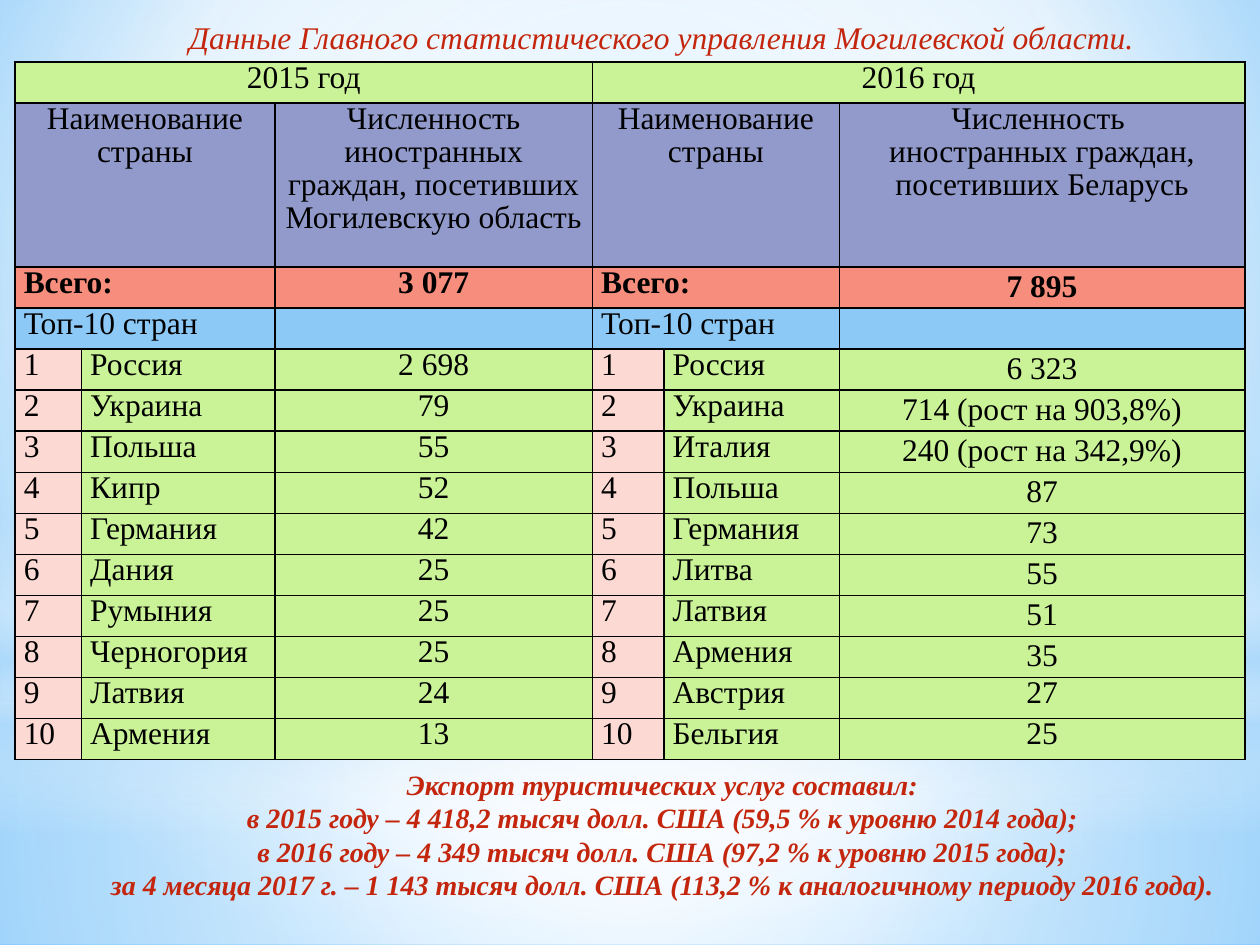
from lxml.etree import SubElement
from pptx import Presentation
from pptx.dml.color import RGBColor
from pptx.enum.shapes import MSO_SHAPE
from pptx.enum.text import MSO_ANCHOR, MSO_AUTO_SIZE, PP_ALIGN
from pptx.oxml.ns import qn
from pptx.util import Pt

FONT = "Times New Roman"
BLACK = RGBColor(0x00, 0x00, 0x00)
RED = RGBColor(0xC3, 0x26, 0x0C)
GREEN = RGBColor(0xCA, 0xF2, 0x97)
VIOLET = RGBColor(0x91, 0x9A, 0xCA)
CORAL = RGBColor(0xF7, 0x8D, 0x7C)
BLUE = RGBColor(0x8C, 0xC9, 0xF7)
PINK = RGBColor(0xFC, 0xD9, 0xD3)
WHITE = RGBColor(0xFF, 0xFF, 0xFF)
SKY = RGBColor(0xB4, 0xDC, 0xFA)
PALE = RGBColor(0x9E, 0xD5, 0xFF)
DEEP = RGBColor(0x5B, 0xB9, 0xFF)


def blend(owner, fill, stops, focus):
    """Fill with (place, colour, opacity) stops, radial at focus, or downward if focus is None."""
    fill.gradient()
    grad = owner.element.find(".//" + qn("a:gradFill"))
    for part in list(grad):
        grad.remove(part)
    group = SubElement(grad, qn("a:gsLst"))
    for place, color, alpha in stops:
        stop = SubElement(group, qn("a:gs"), pos=str(place * 1000))
        tint = SubElement(stop, qn("a:srgbClr"), val=str(color))
        SubElement(tint, qn("a:alpha"), val=str(alpha * 1000))
    if focus is None:
        SubElement(grad, qn("a:lin"), ang="5400000", scaled="0")
    else:
        route = SubElement(grad, qn("a:path"), path="circle")
        sides = {side: str(part * 1000) for side, part in zip("ltrb", focus)}
        SubElement(route, qn("a:fillToRect"), sides)


def style(par, size, color, align):
    par.alignment = align
    par.font.name = FONT
    par.font.size = Pt(size)
    par.font.color.rgb = color


deck = Presentation()
deck.slide_width, deck.slide_height = Pt(720), Pt(540)
slide = deck.slides.add_slide(deck.slide_layouts[5])

# Backdrop
blend(slide, slide.background.fill,
      [(0, PALE, 100), (60, WHITE, 100), (100, DEEP, 100)], (20, 10, 20, 60))
MID = (50, 50, 50, 50)
RECT, OVAL = MSO_SHAPE.RECTANGLE, MSO_SHAPE.OVAL
glows = [
    (RECT, 402, 138, [(0, WHITE, 91), (37, WHITE, 76), (100, SKY, 79)], MID),
    (RECT, 0, 402, [(0, WHITE, 89), (48, WHITE, 62), (100, SKY, 79)], MID),
    (RECT, 297, 180, [(0, WHITE, 0), (29, WHITE, 30), (45, SKY, 40),
                      (55, WHITE, 26), (65, SKY, 60), (100, WHITE, 0)], None),
    (OVAL, 126, 402, [(0, WHITE, 100), (56, WHITE, 0)], MID),
]
for kind, top, height, stops, focus in glows:
    glow = slide.shapes.add_shape(kind, 0, Pt(top), Pt(720), Pt(height))
    glow.shadow.inherit = False
    glow.line.fill.background()
    blend(glow, glow.fill, stops, focus)

# Title, brought in front of the backdrop
title = slide.shapes.title
title.element.getparent().append(title.element)
title.left, title.top, title.width, title.height = Pt(14.4), Pt(6.5), Pt(692), Pt(29)
title.text = "Данные Главного статистического управления Могилевской области."
frame = title.text_frame
frame.vertical_anchor = MSO_ANCHOR.TOP
frame.word_wrap = True
frame.auto_size = MSO_AUTO_SIZE.SHAPE_TO_FIT_TEXT
par = frame.paragraphs[0]
style(par, 18, RED, PP_ALIGN.CENTER)
par.font.italic = True
par._p.get_or_add_pPr().set("indent", str(Pt(35.4)))

# Table
NAME = "Наименование страны"
TOP = "Топ-10 стран"
rows = [
    ("2015 год", "", "", "2016 год", "", ""),
    (NAME, "", "Численность иностранных граждан, посетивших Могилевскую область",
     NAME, "", "Численность \nиностранных граждан, посетивших Беларусь"),
    ("Всего:", "", "3 077", "Всего:", "", "7 895"),
    (TOP, "", "", TOP, "", ""),
]
ranks = [
    ("Россия", "2 698", "Россия", "6 323"),
    ("Украина", "79", "Украина", "714 (рост на 903,8%)"),
    ("Польша", "55", "Италия", "240 (рост на 342,9%)"),
    ("Кипр", "52", "Польша", "87"),
    ("Германия", "42", "Германия", "73"),
    ("Дания", "25", "Литва", "55"),
    ("Румыния", "25", "Латвия", "51"),
    ("Черногория", "25", "Армения", "35"),
    ("Латвия", "24", "Австрия", "27"),
    ("Армения", "13", "Бельгия", "25"),
]
for rank, (old, count, new, total) in enumerate(ranks, 1):
    rows.append((str(rank), old, count, str(rank), new, total))

widths = [38, 110.5, 181.5, 40.8, 100.3, 231.7]
heights = [23.45, 93.8] + [23.45] * 12
table = slide.shapes.add_table(len(rows), len(widths), Pt(8.6), Pt(35.4),
                               Pt(sum(widths)), Pt(sum(heights))).table
table.first_row = table.horz_banding = False
for col, width in zip(table.columns, widths):
    col.width = Pt(width)
for row, height in zip(table.rows, heights):
    row.height = Pt(height)

bands = [GREEN, VIOLET, CORAL, BLUE]
for r, row in enumerate(rows):
    for c, text in enumerate(row):
        cell = table.cell(r, c)
        cell.text = text
        cell.margin_left = cell.margin_right = Pt(5)
        cell.margin_top = cell.margin_bottom = 0
        if c == 5 and r in (2, *range(4, 12)):
            cell.vertical_anchor = MSO_ANCHOR.MIDDLE
        for side in ("a:lnL", "a:lnR", "a:lnT", "a:lnB"):
            edge = SubElement(cell._tc.get_or_add_tcPr(), qn(side), w=str(Pt(1)))
            ink = SubElement(edge, qn("a:solidFill"))
            SubElement(ink, qn("a:srgbClr"), val=str(BLACK))
        cell.fill.solid()
        if r < len(bands):
            cell.fill.fore_color.rgb = bands[r]
        else:
            cell.fill.fore_color.rgb = PINK if c in (0, 3) else GREEN
        center = r < 2 or c in (2, 5)
        for par in cell.text_frame.paragraphs:
            style(par, 18, BLACK, PP_ALIGN.CENTER if center else PP_ALIGN.LEFT)
            par.font.bold = r == 2
            par.line_spacing = 0.95

for r in range(4):
    for c in (0, 3):
        table.cell(r, c).merge(table.cell(r, c + (2 if r == 0 else 1)))

# Export note
note = slide.shapes.add_textbox(Pt(16.6), Pt(434.2), Pt(688.3), Pt(85))
frame = note.text_frame
frame.text = "\n".join([
    "Экспорт туристических услуг составил:",
    "в 2015 году – 4 418,2 тысяч долл. США (59,5 % к уровню 2014 года);",
    "в 2016 году – 4 349 тысяч долл. США (97,2 % к уровню 2015 года);",
    "за 4 месяца 2017 г. – 1 143 тысяч долл. США (113,2 % к аналогичному периоду 2016 года).",
])
frame.word_wrap = False
frame.auto_size = MSO_AUTO_SIZE.SHAPE_TO_FIT_TEXT
frame.vertical_anchor = MSO_ANCHOR.MIDDLE
for par in frame.paragraphs:
    style(par, 16, RED, PP_ALIGN.CENTER)
    par.font.bold = par.font.italic = True
    par._p.get_or_add_pPr().set("indent", str(Pt(35.4)))

deck.save("out.pptx")
